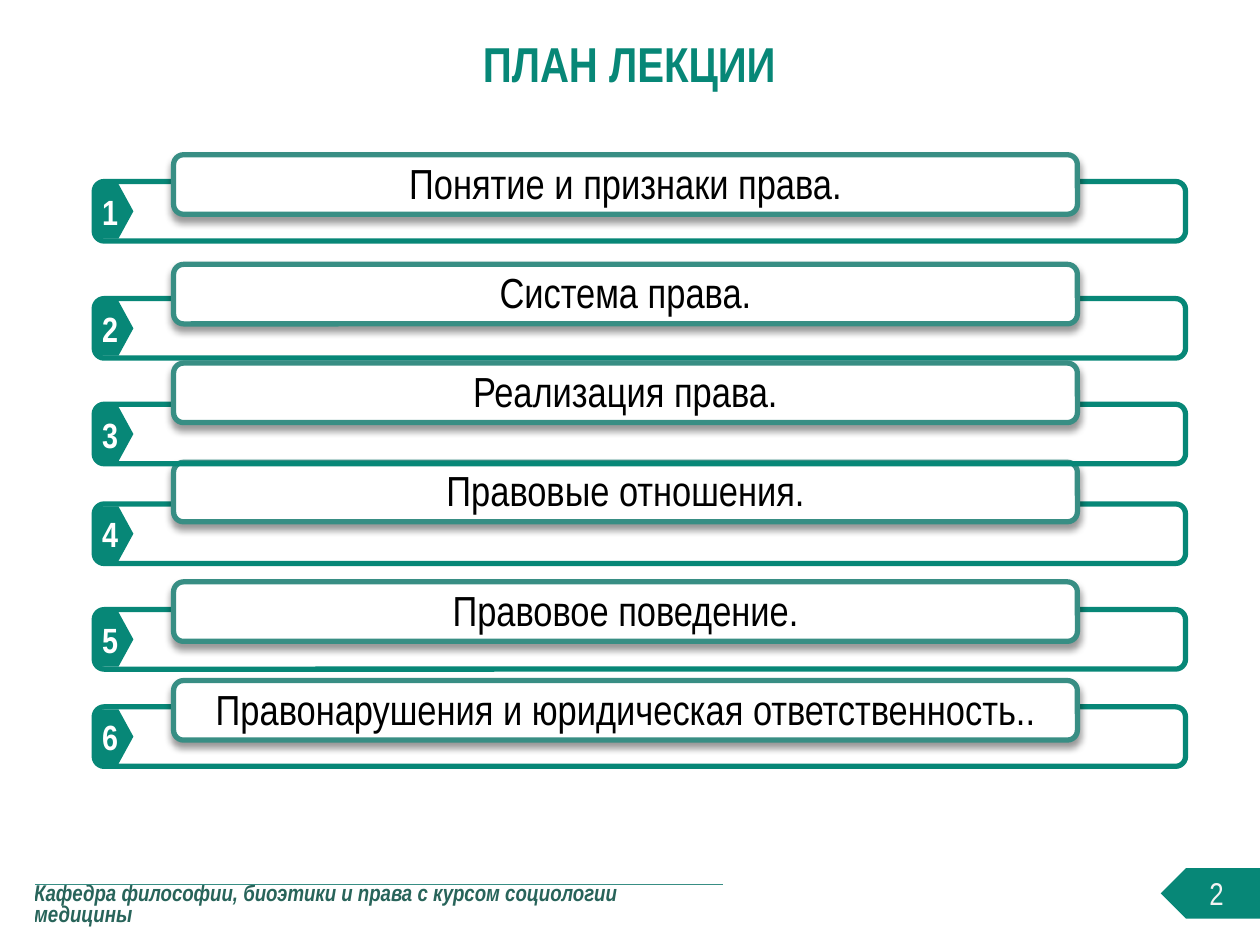
"""Build the lecture plan slide with six numbered topics."""
from lxml.etree import SubElement
from pptx import Presentation
from pptx.dml.color import RGBColor
from pptx.enum.shapes import MSO_SHAPE as Shape
from pptx.enum.text import MSO_ANCHOR as Anchor, PP_ALIGN as Align
from pptx.oxml import parse_xml
from pptx.oxml.ns import nsdecls, qn
from pptx.util import Cm, Pt

FONT = "Arial Narrow"
COLORS = {
    "teal": "078777",
    "soft_teal": "388E84",
    "footer": "28645A",
    "white": "FFFFFF",
    "page": "F2F2F2",
    "black": "000000",
}


def write(frame, text, size, color, bold=False, align=Align.CENTER, anchor=Anchor.MIDDLE, inset=0):
    frame.margin_left = frame.margin_right = Cm(inset)
    frame.margin_top = frame.margin_bottom = Cm(inset)
    frame.vertical_anchor = anchor
    paragraph = frame.paragraphs[0]
    paragraph.text = text
    paragraph.alignment = align
    paragraph.font.name = FONT
    paragraph.font.size = Pt(size)
    paragraph.font.bold = bold
    paragraph.font.color.rgb = RGBColor.from_string(COLORS[color])
    return paragraph


def add_block(shapes, kind, left, top, width, height, fill=None, line=None):
    block = shapes.add_shape(kind, Cm(left), Cm(top), Cm(width), Cm(height))
    block.shadow.inherit = False
    if fill:
        block.fill.solid()
        block.fill.fore_color.rgb = RGBColor.from_string(COLORS[fill])
    else:
        block.fill.background()
    if line:
        block.line.color.rgb = RGBColor.from_string(COLORS[line])
        block.line.width = Pt(3)
    else:
        block.line.fill.background()
    return block


prs = Presentation()
prs.slide_width, prs.slide_height = Cm(25.4), Cm(19.05)
slide = prs.slides.add_slide(prs.slide_layouts[6])

department = slide.shapes.add_table(1, 1, Cm(0.69), Cm(17.83), Cm(13.89), Cm(1.09)).table
department.first_row = department.horz_banding = False
footer = department.cell(0, 0)
footer.fill.background()
footer_text = write(
    footer.text_frame,
    "Кафедра философии, биоэтики и права с курсом социологии медицины",
    13, "footer", bold=True, align=Align.LEFT, anchor=Anchor.TOP,
)
footer_text.font.italic = True
footer.margin_left = footer.margin_top = footer.margin_bottom = 0
footer.margin_right = Cm(0.2)
top_rule = parse_xml(
    f'<a:lnT {nsdecls("a")} w="12700"><a:solidFill>'
    f'<a:srgbClr val="{COLORS["soft_teal"]}"/></a:solidFill></a:lnT>'
)
footer._tc.get_or_add_tcPr().insert(0, top_rule)

title = slide.shapes.add_textbox(Cm(4.11), Cm(0.74), Cm(17.15), Cm(1.22))
title.text_frame.word_wrap = True
write(title.text_frame, "ПЛАН ЛЕКЦИИ", 28, "teal", bold=True).line_spacing = 0.9

topics = [
    (1, "Понятие и признаки права.", 3.66, 3.12),
    (2, "Система права.", 6.02, 5.33),
    (4, "Правовые отношения.", 10.16, 9.32),
    (5, "Правовое поведение.", 12.29, 11.73),
    (6, "Правонарушения и юридическая ответственность..", 14.25, 13.72),
    (3, "Реализация права.", 8.15, 7.32),
]
for number, topic, frame_top, panel_top in topics:
    group = slide.shapes.add_group_shape().shapes
    add_block(group, Shape.ROUNDED_RECTANGLE, 1.9, frame_top, 22, 1.2, line="teal")

    marker = add_block(group, Shape.PENTAGON, 1.9, frame_top + 0.05, 0.79, 1.1, fill="teal")
    marker.adjustments[0] = 0.38
    marker.text_frame.word_wrap = False
    write(marker.text_frame, str(number), 20, "white", bold=True)

    panel = add_block(group, Shape.ROUNDED_RECTANGLE, 3.5, panel_top, 18.22, 1.2, "white", "soft_teal")
    panel.text_frame.word_wrap = True
    write(panel.text_frame, topic, 24, "black", anchor=Anchor.BOTTOM, inset=0.1).line_spacing = 0.7
    effects = panel._element.spPr.find(qn("a:effectLst"))
    shadow = SubElement(effects, qn("a:outerShdw"), blurRad="50800", dist="38100", dir="5400000", rotWithShape="0")
    shade = SubElement(shadow, qn("a:srgbClr"), val=COLORS["black"])
    SubElement(shade, qn("a:alpha"), val="40000")

page = add_block(slide.shapes, Shape.PENTAGON, 23.4, 17.5, 2, 1.02, fill="teal")
page._element.spPr.xfrm.set("flipH", "1")
write(page.text_frame, "2", 18, "page", inset=0.13)

prs.save("out.pptx")
